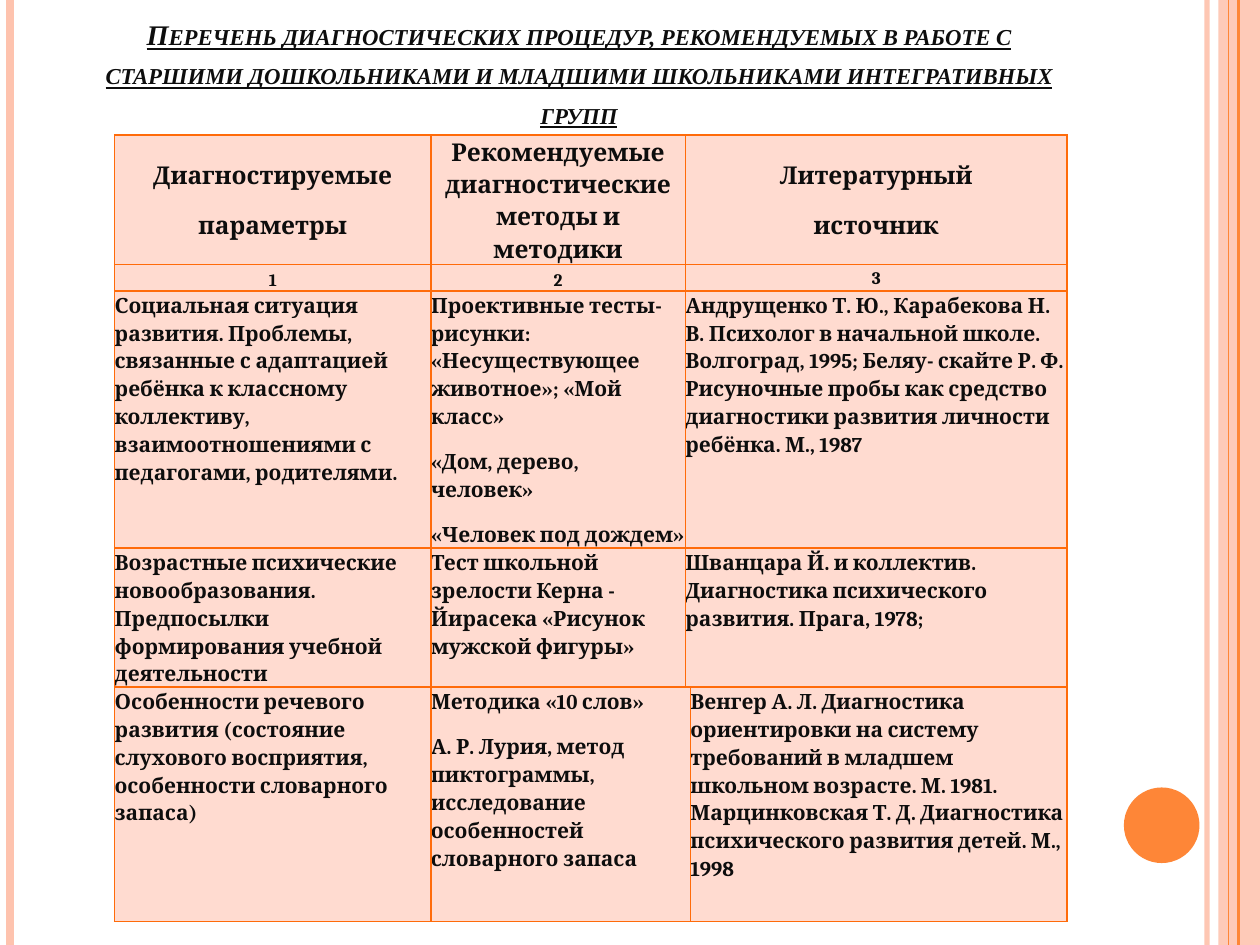
import pptx
import pptx.util
import pptx.dml.color
import pptx.enum.shapes
import pptx.enum.text
import pptx.oxml
import pptx.oxml.ns
from dataclasses import dataclass
from lxml import etree

Inches, Pt = pptx.util.Inches, pptx.util.Pt
RGB = pptx.dml.color.RGBColor.from_string
Align, Anchor = pptx.enum.text.PP_ALIGN, pptx.enum.text.MSO_ANCHOR
Kind = pptx.enum.shapes.MSO_SHAPE
qn = pptx.oxml.ns.qn


@dataclass
class Theme:
    ink: str = "0D0D0D"
    pale: str = "FEC3AE"
    orange: str = "FE8637"
    edge: str = "FF6B0A"
    cell: str = "FFDBD0"
    title: float = 16.2
    head: float = 14
    num: float = 10
    body: float = 12


theme = Theme()


def style(para, size, font, align):
    para.alignment = align
    para.line_spacing = 1.15
    para.space_after = Pt(10)
    para.font.size = Pt(size)
    para.font.name = font
    para.font.bold = True
    para.font.color.rgb = RGB(theme.ink)


def fade(part, alpha):
    color = next(part.iter(qn("a:srgbClr")))
    etree.SubElement(color, qn("a:alpha")).set("val", str(alpha * 1000))


prs = pptx.Presentation()
prs.slide_width, prs.slide_height = Inches(10), Inches(7.5)
slide = prs.slides.add_slide(prs.slide_layouts[5])
shapes = slide.shapes

# Side band and disc
for kind, box, color, alpha in [
    (Kind.RECTANGLE, (9.67, 0, 0.33, 7.5), theme.pale, 87),
    (Kind.OVAL, (8.92, 6.25, 0.6, 0.6), theme.orange, 100),
]:
    shape = shapes.add_shape(kind, *map(Inches, box))
    shape.shadow.inherit = False
    shape.fill.solid()
    shape.fill.fore_color.rgb = RGB(color)
    shape.line.fill.background()
    if alpha < 100:
        fade(shape.fill._xPr, alpha)

# Vertical stripes
for x, color, width, alpha in [
    (9.58, theme.pale, 3, 93),
    (0.08, theme.pale, 4.5, 100),
    (9.83, theme.orange, 1.5, 100),
    (9.75, theme.orange, 0.75, 100),
]:
    line = shapes.add_connector(
        pptx.enum.shapes.MSO_CONNECTOR.STRAIGHT,
        Inches(x), 0, Inches(x), prs.slide_height)
    line.line.color.rgb = RGB(color)
    line.line.width = Pt(width)
    if alpha < 100:
        fade(line.line._ln, alpha)
    etree.SubElement(line._element.spPr, qn("a:effectLst"))

# Title
title = shapes.title
title.left, title.top = Inches(0.51), Inches(0.05)
title.width, title.height = Inches(8.17), Inches(0.98)
frame = title.text_frame
frame.text = ("Перечень диагностических процедур, рекомендуемых в работе с старшими "
              "дошкольниками и младшими школьниками интегративных групп")
frame.word_wrap = True
frame.auto_size = pptx.enum.text.MSO_AUTO_SIZE.NONE
frame.vertical_anchor = Anchor.BOTTOM
frame.margin_top = frame.margin_bottom = 0
para = frame.paragraphs[0]
style(para, theme.title, "Times New Roman", Align.CENTER)
para.font.italic = para.font.underline = True
para.runs[0]._r.get_or_add_rPr().set("cap", "small")

# Table: each row lists its cells, a line break starts a new paragraph
rows = [
    ["Диагностируемые\nпараметры",
     "Рекомендуемые диагностические методы и методики",
     "Литературный\nисточник"],
    ["1", "2", "3"],
    ["Социальная ситуация развития. Проблемы, связанные с адаптацией ребёнка к "
     "классному коллективу, взаимоотношениями с педагогами, родителями.",
     "Проективные тесты- рисунки: «Несуществующее животное»; «Мой класс»\n"
     "«Дом, дерево, человек»\n«Человек под дождем»",
     "Андрущенко Т. Ю., Карабекова Н. В. Психолог в начальной школе. Волгоград, "
     "1995; Беляу- скайте Р. Ф. Рисуночные пробы как средство диагностики развития "
     "личности ребёнка. М., 1987"],
    ["Возрастные психические новообразования. Предпосылки формирования учебной "
     "деятельности",
     "Тест школьной зрелости Керна - Йирасека «Рисунок мужской фигуры»",
     "Шванцара Й. и коллектив. Диагностика психического развития. Прага, 1978;"],
    ["Особенности речевого развития (состояние слухового восприятия, особенности "
     "словарного запаса)",
     "Методика «10 слов»\nА. Р. Лурия, метод пиктограммы, исследование "
     "особенностей словарного запаса",
     "Венгер А. Л. Диагностика ориентировки на систему требований в младшем "
     "школьном возрасте. М. 1981. Марцинковская Т. Д. Диагностика психического "
     "развития детей. М., 1998"],
]
wide = [2.51, 2.02, 0.04, 2.99]
high = [0.9, 0.21, 2.02, 1.03, 1.86]
sizes = [theme.head, theme.num] + [theme.body] * 3
last = len(rows) - 1

table = shapes.add_table(len(high), len(wide), Inches(0.91), Inches(1.07),
                         Inches(sum(wide)), Inches(sum(high))).table
table.first_row = table.horz_banding = False
for col, width in zip(table.columns, wide):
    col.width = Inches(width)
for row, height in zip(table.rows, high):
    row.height = Inches(height)

# Cell borders and fill
for cell in table.iter_cells():
    cell.margin_left = cell.margin_right = cell.margin_top = cell.margin_bottom = 0
    props = cell._tc.get_or_add_tcPr()
    for side in ("lnL", "lnR", "lnT", "lnB"):
        edge = etree.SubElement(props, qn("a:" + side), w=str(Pt(1)))
        fill = etree.SubElement(edge, qn("a:solidFill"))
        etree.SubElement(fill, qn("a:srgbClr"), val=theme.edge)
    cell.fill.solid()
    cell.fill.fore_color.rgb = RGB(theme.cell)

# Cell text; the narrow column joins the right one, in the last row the middle one
for r, texts in enumerate(rows):
    start = 1 if r == last else 2
    table.cell(r, start).merge(table.cell(r, start + 1))
    for c, text in zip((0, 1, 3 if r == last else 2), texts):
        cell = table.cell(r, c)
        cell.text_frame.text = text
        if r > 1:
            cell.vertical_anchor = Anchor.TOP
        elif c == 2 or (r, c) == (0, 0):
            cell.vertical_anchor = Anchor.MIDDLE
        else:
            cell.vertical_anchor = Anchor.BOTTOM
        for para in cell.text_frame.paragraphs:
            style(para, sizes[r], "Cambria", Align.CENTER if r < 2 else Align.LEFT)

prs.save("out.pptx")
